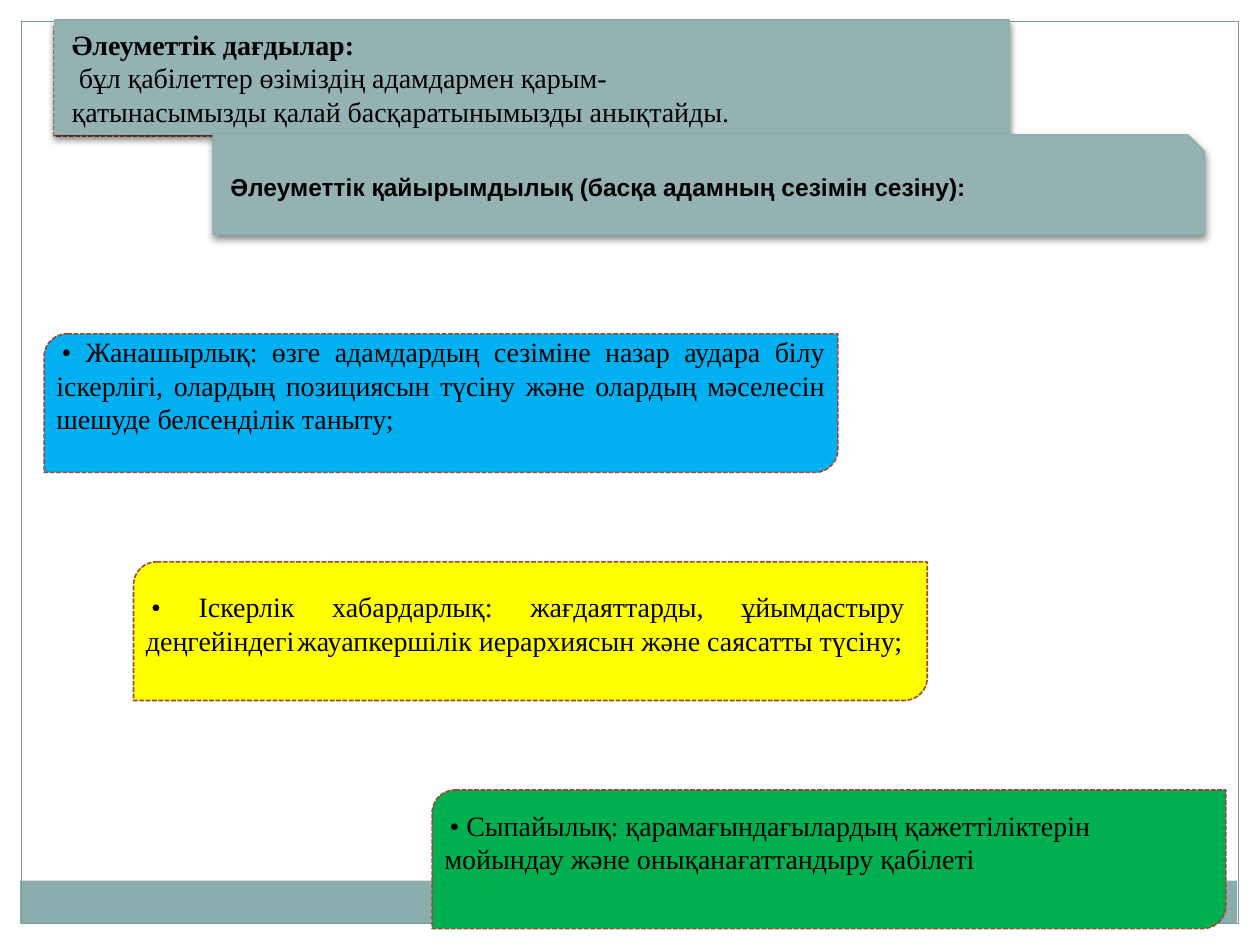
from lxml import etree
from pptx import Presentation
from pptx.dml.color import RGBColor
from pptx.enum import dml, shapes, text
from pptx.oxml import ns
from pptx.util import Inches, Pt

THEME = {
    "white": "FFFFFF", "ink": "000000", "band": "8CADAE", "frame": "7C999A",
    "panel": "95B2B3", "accent": "D16349", "dash": "9B4936",
    "serif": "Times New Roman", "sans": "Arial",
    "body": 16, "subhead": 14, "small": 7,
}
RECTANGLE = shapes.MSO_SHAPE.RECTANGLE
SNIPPED = shapes.MSO_SHAPE.SNIP_1_RECTANGLE
DIAGONAL = shapes.MSO_SHAPE.ROUND_2_DIAG_RECTANGLE
LEFT, JUSTIFY = text.PP_ALIGN.LEFT, text.PP_ALIGN.JUSTIFY

# Each paragraph is a list of runs: (text, size in the theme, bold)
HEADING = [
    [("Әлеуметтік дағдылар:", "body", True)],
    [(" бұл қабілеттер өзіміздің адамдармен қарым-", "body", False)],
    [("қатынасымызды қалай басқаратынымызды анықтайды.", "body", False)],
]
SUBHEADING = [[("Әлеуметтік қайырымдылық (басқа адамның сезімін сезіну):", "subhead", True)]]

MARGINS = [(0, 0, 10, 0.17), (9.83, 0, 0.17, 7.5), (0, 0, 0.17, 7.5)]
CARD_SIZE = (6.3, 1.1)
CARD_TOP, CARD_STEP = 2.65, 1.81
# left, fill, text top offset, text size, alignment, runs
CARDS = [
    (0.35, "00B0F0", -0.05, (6.3, 0.91), JUSTIFY, [
        ("• Жанашырлық: өзге адамдардың сезіміне назар аудара білу іскерлігі, "
         "олардың позициясын түсіну және олардың мәселесін шешуде белсенділік таныту;",
         "body", False)]),
    (1.06, "FFFF00", 0.03, (6.22, 0.91), JUSTIFY, [
        ("• Іскерлік хабардарлық: жағдаяттарды, ұйымдастыру деңгейіндегі", "body", False),
        (" ", "small", False),
        ("жауапкершілік иерархиясын және саясатты түсіну;", "body", False)]),
    (3.43, "00B050", 0.09, (6.22, 0.64), LEFT, [
        ("• Сыпайылық: қарамағындағылардың қажеттіліктерін мойындау "
         "және онықанағаттандыру қабілеті", "body", False)]),
]


def color(value):
    return RGBColor.from_string(value)


def paint(shape, fill=None, line=None, width=0.75, dashed=False):
    if fill:
        shape.fill.solid()
        shape.fill.fore_color.rgb = color(fill)
    else:
        shape.fill.background()
    if line:
        shape.line.color.rgb = color(line)
        shape.line.width = Pt(width)
        if dashed:
            shape.line.dash_style = dml.MSO_LINE.SQUARE_DOT
    else:
        shape.line.fill.background()


def add_panel(slide, kind, box, **style):
    shape = slide.shapes.add_shape(kind, *map(Inches, box))
    shape.shadow.inherit = False
    paint(shape, **style)
    return shape


def add_shadow(shape):
    shape.shadow.inherit = False
    effects = shape._element.spPr.find(ns.qn("a:effectLst"))
    shadow = etree.SubElement(effects, ns.qn("a:outerShdw"), blurRad=str(Pt(4)),
                              dist=str(Pt(2)), dir="5400000", rotWithShape="0")
    tint = etree.SubElement(shadow, ns.qn("a:srgbClr"), val=THEME["ink"])
    etree.SubElement(tint, ns.qn("a:alpha"), val="45000")


def write(shape, paragraphs, font=THEME["serif"], alignment=JUSTIFY):
    frame = shape.text_frame
    frame.word_wrap = True
    frame.auto_size = text.MSO_AUTO_SIZE.SHAPE_TO_FIT_TEXT
    frame.vertical_anchor = text.MSO_ANCHOR.MIDDLE
    for index, runs in enumerate(paragraphs):
        paragraph = frame.add_paragraph() if index else frame.paragraphs[0]
        paragraph.alignment = alignment
        paragraph.space_before = Pt(0)
        paragraph._p.get_or_add_pPr().set("indent", str(Inches(0.04)))
        paragraph.font.name = font
        paragraph.font.color.rgb = color(THEME["ink"])
        for words, size, bold in runs:
            run = paragraph.add_run()
            run.text = words
            run.font.size = Pt(THEME[size])
            run.font.bold = bold


def add_text(slide, box, paragraphs, **style):
    write(slide.shapes.add_textbox(*map(Inches, box)), paragraphs, **style)


def add_frame(slide):
    for box in MARGINS:
        add_panel(slide, RECTANGLE, box, fill=THEME["white"])
    add_panel(slide, RECTANGLE, (0.16, 6.99, 9.66, 0.34), fill=THEME["band"])
    add_panel(slide, RECTANGLE, (0.17, 0.17, 9.66, 7.16), line=THEME["frame"])


def add_headings(slide):
    add_panel(slide, SNIPPED, (0.43, 0.21, 5.43, 0.87), fill=THEME["accent"],
              line=THEME["dash"], width=0.9, dashed=True)
    title = slide.shapes.title
    title.left, title.top, title.width, title.height = map(Inches, (0.43, 0.16, 7.58, 0.91))
    slide.shapes._spTree.append(title._element)  # bring in front of the frame
    paint(title, fill=THEME["panel"], line=THEME["band"])
    add_shadow(title)
    write(title, HEADING)

    panel = add_panel(slide, SNIPPED, (1.69, 1.07, 7.87, 0.79),
                      fill=THEME["panel"], line=THEME["band"])
    add_shadow(panel)
    add_text(slide, (1.69, 1.31, 7.8, 0.34), SUBHEADING, font=THEME["sans"])


def add_cards(slide):
    for index, (left, fill, offset, size, alignment, runs) in enumerate(CARDS):
        top = CARD_TOP + index * CARD_STEP
        add_panel(slide, DIAGONAL, (left, top, *CARD_SIZE), fill=fill,
                  line=THEME["dash"], width=0.9, dashed=True)
        add_text(slide, (left, top + offset, *size), [runs], alignment=alignment)


def main():
    presentation = Presentation()
    presentation.slide_width, presentation.slide_height = Inches(10), Inches(7.5)
    slide = presentation.slides.add_slide(presentation.slide_layouts[5])
    add_frame(slide)
    add_headings(slide)
    add_cards(slide)
    presentation.save("out.pptx")


if __name__ == "__main__":
    main()
